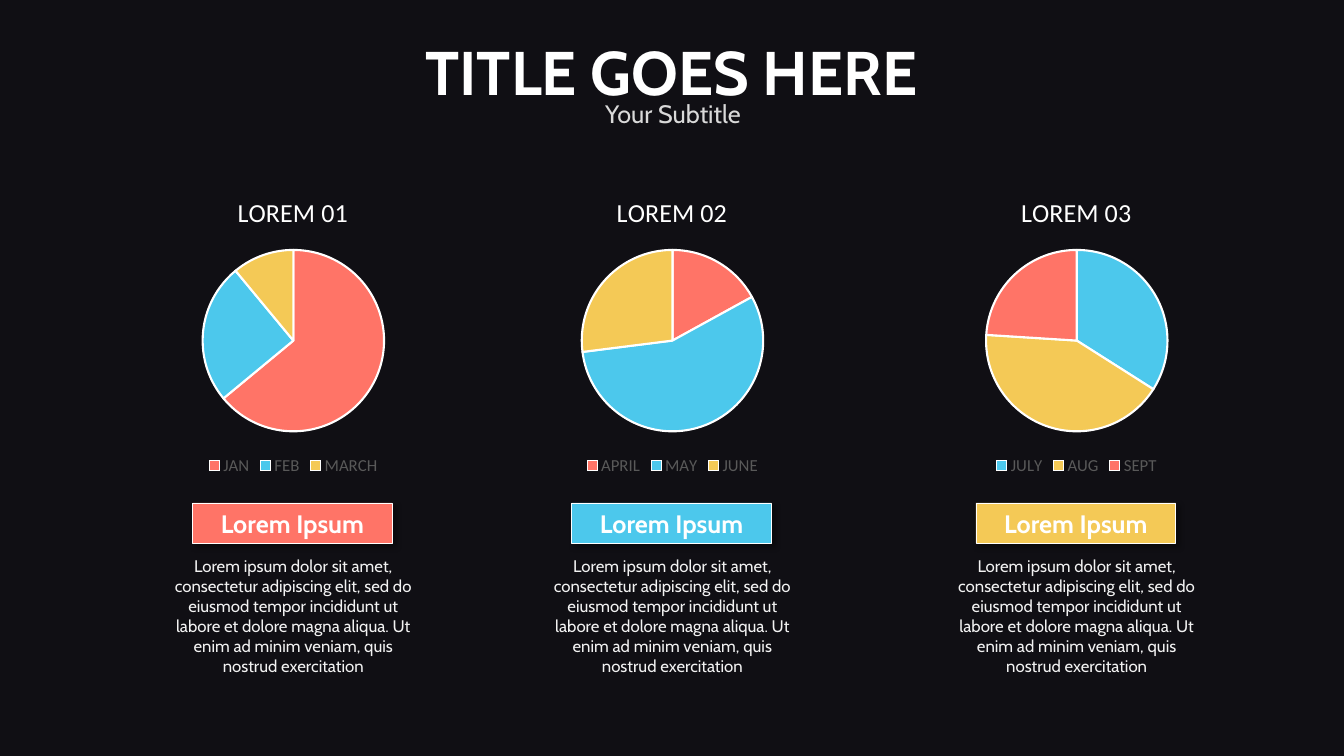
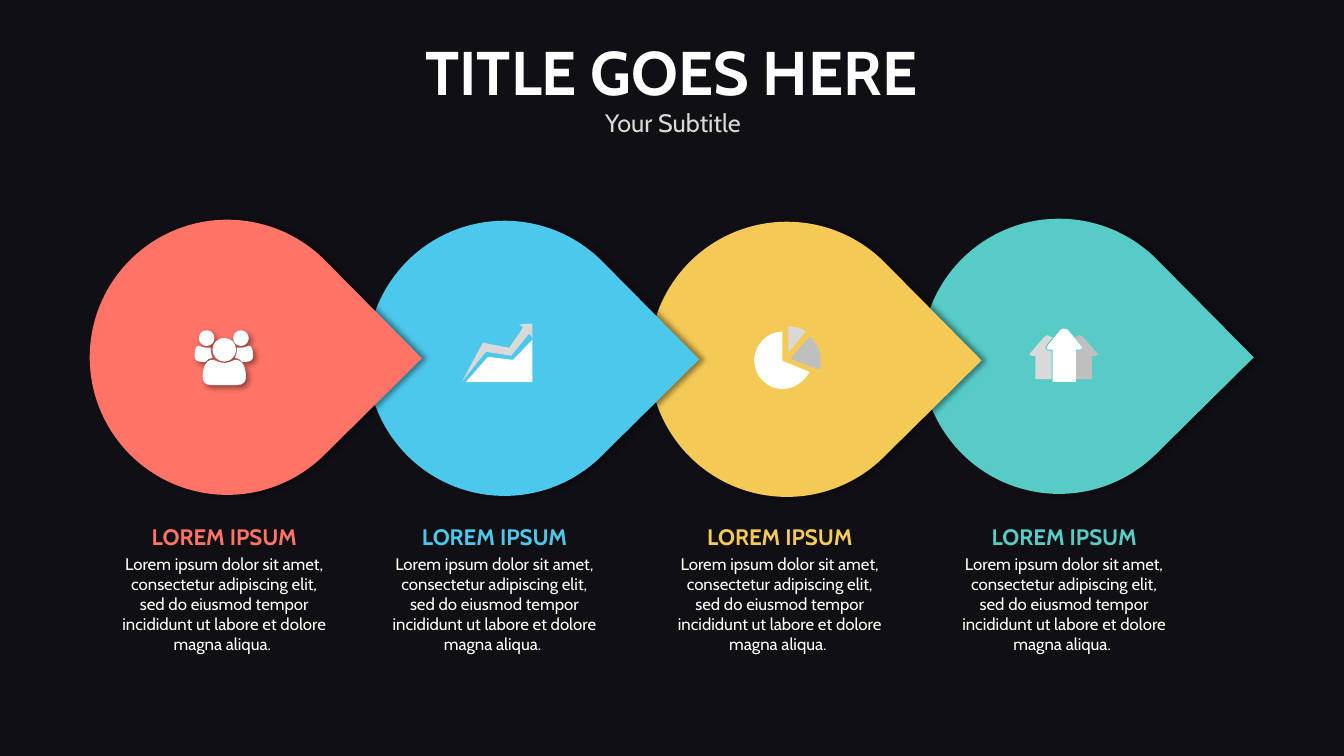
"""Build a dark two-slide deck: three pie charts and a four-step teardrop flow."""
from dataclasses import dataclass

from lxml.etree import SubElement
from pptx import Presentation
from pptx.chart.data import CategoryChartData
from pptx.dml.color import RGBColor
from pptx.enum.chart import XL_CHART_TYPE, XL_LEGEND_POSITION
from pptx.enum.shapes import MSO_SHAPE
from pptx.enum.text import MSO_ANCHOR, MSO_AUTO_SIZE, PP_ALIGN
from pptx.oxml.ns import qn
from pptx.util import Inches, Pt


@dataclass(frozen=True)
class Theme:
    """Colours, fonts and type sizes of the deck."""
    ground: str = "524E67"
    black: str = "000000"
    white: str = "FFFFFF"
    soft: str = "F2F2F2"
    light: str = "D9D9D9"
    mid: str = "BFBFBF"
    legend: str = "595959"
    coral: str = "FF7467"
    blue: str = "4CC8EC"
    yellow: str = "F4C956"
    teal: str = "57CCC6"
    font: str = "Cabin"
    chart_font: str = "Calibri"
    title: int = 44
    subtitle: int = 18
    chart_title: float = 18.6
    heading: int = 16
    body: int = 12


THEME = Theme()
WIDTH, HEIGHT = 13.33, 7.5
TITLE, SUBTITLE = "TITLE GOES HERE", "Your Subtitle"
STEP_TEXT = ("Lorem ipsum dolor sit amet, consectetur adipiscing elit, sed do eiusmod "
             "tempor incididunt ut labore et dolore magna aliqua. ")
PIE_TEXT = STEP_TEXT + "Ut enim ad minim veniam, quis nostrud exercitation"

PIES = [
    {"title": "LOREM 01", "center": 2.91, "banner": THEME.coral,
     "slices": [("JAN", 64, THEME.coral), ("FEB", 25, THEME.blue), ("MARCH", 11, THEME.yellow)]},
    {"title": "LOREM 02", "center": 6.67, "banner": THEME.blue,
     "slices": [("APRIL", 17, THEME.coral), ("MAY", 56, THEME.blue), ("JUNE", 27, THEME.yellow)]},
    {"title": "LOREM 03", "center": 10.68, "banner": THEME.yellow,
     "slices": [("JULY", 34, THEME.blue), ("AUG", 42, THEME.yellow), ("SEPT", 24, THEME.coral)]},
]


def circle(x, y, radius):
    """Return a circle as four cubic segments."""
    pull = 0.55 * radius
    left, right, top, bottom = x - radius, x + radius, y - radius, y + radius
    return [(right, y), (right, y + pull, x + pull, bottom, x, bottom),
            (x - pull, bottom, left, y + pull, left, y),
            (left, y - pull, x - pull, top, x, top),
            (x + pull, top, right, y - pull, right, y)]


def mirror(contour, width):
    """Flip a contour from left to right inside the given width."""
    return [tuple(width - value if index % 2 == 0 else value
                  for index, value in enumerate(segment)) for segment in contour]


SHOULDER = [(11, 31), (7, 31), (3, 31, 0, 29, 0, 26), (0, 23, 0, 15, 4, 15),
            (5, 15, 8, 17, 12, 17), (16, 17), (16, 19), (16, 21, 17, 25, 18, 27),
            (15, 27, 12, 29, 11, 31)]
TORSO = [(42, 54), (16, 54), (11, 54, 8, 51, 8, 46), (8, 39, 10, 29, 18, 29),
         (20, 29, 23, 32, 30, 32), (35, 32, 39, 29, 40, 29), (49, 29, 51, 39, 51, 46),
         (51, 51, 48, 54, 42, 54)]
SIDE_HEAD = circle(12, 7.5, 7.75)
PEOPLE = [SHOULDER, SIDE_HEAD, TORSO, circle(29.5, 19, 11.75),
          mirror(SIDE_HEAD, 58), mirror(SHOULDER, 58)]
SIDE_ARROW = [(23, 50), (23, 22), (21, 22), (18, 22, 17, 21, 17, 20), (17, 19, 17, 18, 18, 16),
              (24, 9), (22, 8), (20, 6, 18, 6, 16, 8), (3, 23), (0, 25, 1, 27, 4, 27),
              (7, 27), (7, 50)]
MAIN_ARROW = [(47, 53), (47, 21), (50, 21), (53, 21, 54, 19, 52, 17), (39, 1),
              (38, 1, 36, 0, 35, 0), (34, 0, 33, 1, 32, 1), (19, 17),
              (17, 19, 18, 21, 20, 21), (24, 21), (24, 53)]
AREA = [(4, 58), (26, 33), (51, 36), (70, 16), (70, 58)]
TREND = [(70, 14), (70, 0), (57, 1), (61, 4), (47, 24), (21, 19), (0, 58),
         (24, 28), (49, 32), (67, 10)]
DISC = [(28, 34), (28, 5), (13, 5, 0, 18, 0, 34), (0, 49, 13, 62, 28, 62),
        (40, 62, 50, 54, 55, 45)]
WEDGE = [(55, 10), (36, 32), (65, 43), (66, 41, 66, 37, 66, 34), (66, 24, 62, 16, 55, 10)]
SLIVER = [(34, 0), (34, 26), (51, 5), (46, 1, 40, 0, 34, 0)]

STEPS = [
    {"color": THEME.coral, "drop": (0.89, 2.18), "text": 1.09, "icon": (1.93, 3.28),
     "parts": [(THEME.white, PEOPLE)], "icon_shadow": 45},
    {"color": THEME.blue, "drop": (3.64, 2.19), "text": 3.77, "icon": (4.58, 3.21),
     "parts": [(THEME.white, [AREA]), (THEME.light, [TREND])]},
    {"color": THEME.yellow, "drop": (6.44, 2.2), "text": 6.6, "icon": (7.48, 3.24),
     "parts": [(THEME.white, [DISC]), (THEME.mid, [WEDGE]), (THEME.light, [SLIVER])]},
    {"color": THEME.teal, "drop": (9.14, 2.17), "text": 9.42, "icon": (10.2, 3.26),
     "parts": [(THEME.mid, [mirror(SIDE_ARROW, 70)]), (THEME.light, [SIDE_ARROW]),
               (THEME.white, [MAIN_ARROW])]},
]


def rgb(color):
    """Turn a hex string into a colour."""
    return RGBColor.from_string(color)


def style(font, size, color, bold=False, name=THEME.font):
    """Format a font."""
    font.name, font.size, font.bold = name, Pt(size), bold
    font.color.rgb = rgb(color)


def write(frame, lines, insets=(0.1, 0.05), anchor=MSO_ANCHOR.TOP):
    """Fill a text frame with centred lines of (text, size, colour, bold)."""
    frame.auto_size, frame.word_wrap = MSO_AUTO_SIZE.NONE, True
    frame.vertical_anchor = anchor
    frame.margin_left = frame.margin_right = Inches(insets[0])
    frame.margin_top = frame.margin_bottom = Inches(insets[1])
    frame.text = "\n".join(line[0] for line in lines)
    for index, (paragraph, line) in enumerate(zip(frame.paragraphs, lines)):
        paragraph.alignment = PP_ALIGN.CENTER
        paragraph.space_before = Pt(0.2 * line[1] if index else 0)
        style(paragraph.runs[0].font, *line[1:])


def place(shape, left, top, width, height):
    """Move and size a shape in inches."""
    shape.left, shape.top = Inches(left), Inches(top)
    shape.width, shape.height = Inches(width), Inches(height)


def paint(shape, color, shadow_angle=None, line=None):
    """Set fill, outline and optional soft shadow."""
    shape.fill.solid()
    shape.fill.fore_color.rgb = rgb(color)
    if line:
        shape.line.color.rgb, shape.line.width = rgb(line), Pt(0.5)
    else:
        shape.line.fill.background()
    shape.shadow.inherit = False
    if shadow_angle is not None:
        effects = shape._element.spPr.find(qn("a:effectLst"))
        shadow = SubElement(effects, qn("a:outerShdw"), blurRad=str(Pt(4)), dist=str(Pt(3)),
                            dir=str(shadow_angle * 60000), algn="ctr", rotWithShape="0")
        tint = SubElement(shadow, qn("a:srgbClr"), val=THEME.black)
        SubElement(tint, qn("a:alpha"), val="40000")


def darken_master(deck, page):
    """Give the master its ground colour and a veil of 80 percent black."""
    ground = deck.slide_master.background.fill
    ground.solid()
    ground.fore_color.rgb = rgb(THEME.ground)
    veil = page.shapes.add_shape(MSO_SHAPE.RECTANGLE, 0, 0, deck.slide_width, deck.slide_height)
    paint(veil, THEME.black)
    tint = veil._element.spPr.find(qn("a:solidFill"))[0]
    SubElement(tint, qn("a:alpha"), val="80000")
    deck.slide_master.shapes._spTree.insert(2, veil._element)


def add_page(deck, subtitle_top):
    """Add a slide with the shared title and subtitle."""
    page = deck.slides.add_slide(deck.slide_layouts[0])
    title, subtitle = page.shapes.title, page.placeholders[1]
    place(title, 3.65, 0.29, 6.02, 0.84)
    write(title.text_frame, [(TITLE, THEME.title, THEME.white, True)])
    place(subtitle, 4.41, subtitle_top, 4.53, 0.4)
    write(subtitle.text_frame, [(SUBTITLE, THEME.subtitle, THEME.light)])
    return page


def set_layout(element, position, **shares):
    """Give a chart part a manual layout in shares of the chart."""
    for old in element.findall(qn("c:layout")):
        element.remove(old)
    layout = SubElement(element, qn("c:layout"))
    element.insert(position, layout)
    manual = SubElement(layout, qn("c:manualLayout"))
    if "w" in shares:
        SubElement(manual, qn("c:layoutTarget"), val="inner")
    for mode in ("xMode", "yMode"):
        SubElement(manual, qn(f"c:{mode}"), val="edge")
    for key, share in shares.items():
        SubElement(manual, qn(f"c:{key}"), val=str(share))


def add_pie(page, pie):
    """Add a titled pie chart with its legend."""
    names, values, colors = zip(*pie["slices"])
    data = CategoryChartData()
    data.categories = names
    data.add_series("Series 1", values)
    side = 3
    chart = page.shapes.add_chart(XL_CHART_TYPE.PIE, Inches(pie["center"] - side / 2),
                                  Inches(1.76), Inches(side), Inches(side), data).chart
    style(chart.font, 10, THEME.black, name=THEME.chart_font)
    chart.has_title = chart.has_legend = True
    chart.chart_title.text_frame.text = pie["title"]
    style(chart.chart_title.text_frame.paragraphs[0].runs[0].font, THEME.chart_title,
          THEME.white, name=THEME.chart_font)
    chart.legend.position = XL_LEGEND_POSITION.BOTTOM
    chart.legend.include_in_layout = False
    style(chart.legend.font, THEME.body, THEME.legend, name=THEME.chart_font)
    chart.plots[0].vary_by_categories = True
    for index, color in enumerate(colors):
        point = chart.plots[0].series[0].points[index].format
        point.fill.solid()
        point.fill.fore_color.rgb = rgb(color)
        point.line.color.rgb, point.line.width = rgb(THEME.white), Pt(1.5)
    set_layout(chart.chart_title._element, 1, x=0.3, y=0.04)
    set_layout(chart._chartSpace.xpath("c:chart/c:plotArea")[0], 0, x=0.2, y=0.24, w=0.6, h=0.6)


def build_pies(deck):
    """Build the slide with three pies, banners and captions."""
    page = add_page(deck, 0.93)
    darken_master(deck, page)
    for pie in PIES:
        caption = page.shapes.add_textbox(0, 0, 0, 0)
        place(caption, pie["center"] - 1.25, 5.48, 2.5, 1.28)
        write(caption.text_frame, [(PIE_TEXT, THEME.body, THEME.soft)], (0.07, 0.03))
        banner = page.shapes.add_shape(MSO_SHAPE.RECTANGLE, 0, 0, 0, 0)
        place(banner, pie["center"] - 1, 4.99, 1.98, 0.4)
        paint(banner, pie["banner"], 45, THEME.white)
        write(banner.text_frame, [("Lorem Ipsum", THEME.subtitle, THEME.white, True)],
              anchor=MSO_ANCHOR.MIDDLE)
        add_pie(page, pie)


def add_outline(page, contours, left, top):
    """Add a freeform whose contours mix lines and cubic curves, in hundredths of an inch."""
    outlines = [[[Inches((top if index % 2 else left) + value / 100)
                  for index, value in enumerate(segment)] for segment in contour]
                for contour in contours]
    builder = page.shapes.build_freeform(*outlines[0][0])
    for index, outline in enumerate(outlines):
        if index:
            builder.move_to(*outline[0])
        builder.add_line_segments([segment[-2:] for segment in outline[1:]], close=True)
    shape = builder.convert_to_shape()
    segments = [segment for outline in outlines for segment in outline[1:]]
    for line, segment in zip(shape._element.xpath(".//a:lnTo"), segments):
        if len(segment) == 6:
            curve = SubElement(line.getparent(), qn("a:cubicBezTo"))
            for x, y in zip(segment[::2], segment[1::2]):
                SubElement(curve, qn("a:pt"), x=str(x - shape.left), y=str(y - shape.top))
            line.getparent().replace(line, curve)
    return shape


def build_steps(deck):
    """Build the slide with four overlapping teardrops."""
    page = add_page(deck, 1.01)
    for step in reversed(STEPS):
        drop = page.shapes.add_shape(MSO_SHAPE.TEAR, 0, 0, 0, 0)
        place(drop, *step["drop"], 2.73, 2.73)
        drop.rotation = 45.3
        paint(drop, step["color"], 0)
    for step in STEPS:
        caption = page.shapes.add_textbox(0, 0, 0, 0)
        place(caption, step["text"], 5.14, 2.27, 1.42)
        write(caption.text_frame, [("LOREM IPSUM", THEME.heading, step["color"], True),
                                   (STEP_TEXT, THEME.body, THEME.white)])
        for color, contours in step["parts"]:
            paint(add_outline(page, contours, *step["icon"]), color, step.get("icon_shadow"))


def main():
    """Create and save the deck."""
    deck = Presentation()
    deck.slide_width, deck.slide_height = Inches(WIDTH), Inches(HEIGHT)
    build_pies(deck)
    build_steps(deck)
    deck.save("out.pptx")


if __name__ == "__main__":
    main()
